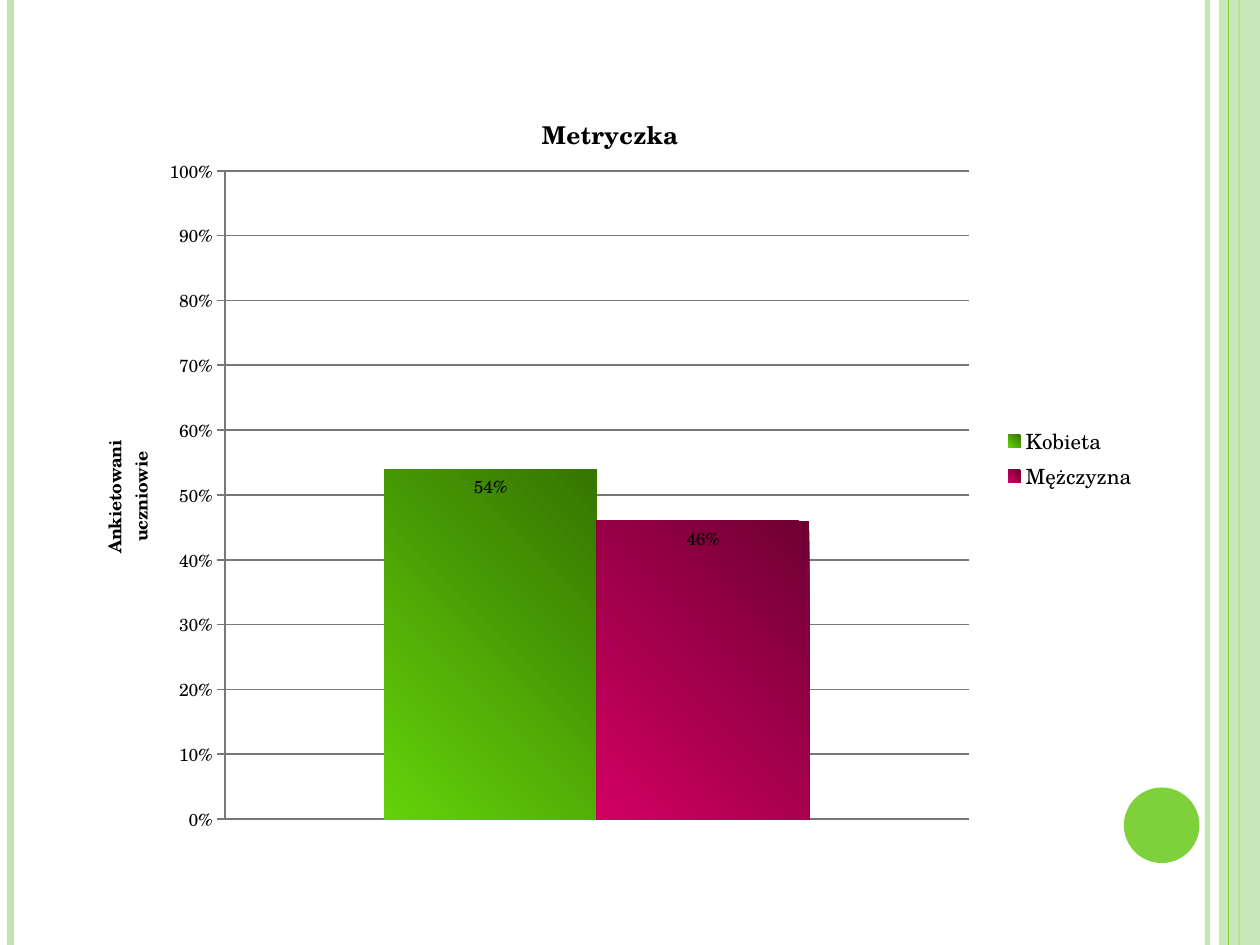
from lxml import etree
from pptx import Presentation
from pptx.chart import data
from pptx.dml.color import RGBColor
from pptx.enum import chart as ch, shapes
from pptx.oxml import parse_xml
from pptx.oxml.ns import nsdecls, qn
from pptx.util import Pt

PALE = RGBColor(0xC0, 0xE5, 0xAF)
GREEN = RGBColor(0x7F, 0xD1, 0x3B)
BLACK = RGBColor(0, 0, 0)
GREY = RGBColor(0x78, 0x78, 0x78)
# Bar gradients: glow in the lower left corner, then the outer colour
BAR_COLORS = [
    (RGBColor(0x64, 0xD2, 0x0A), RGBColor(0x35, 0x75, 0x00)),
    (RGBColor(0xD2, 0x00, 0x64), RGBColor(0x6E, 0x00, 0x32)),
]
FONT = "TeX Gyre Schola"


def set_alpha(parent, percent):
    color = next(parent.iter(qn("a:srgbClr")))
    etree.SubElement(color, qn("a:alpha")).set("val", str(percent * 1000))


def place(element, mode="", **fractions):
    """Give a chart part a manual layout, as fractions of the chart."""
    for old in element.findall(qn("c:layout")):
        element.remove(old)
    target = f'<c:layoutTarget val="{mode}"/>' if mode else ""
    modes = "".join(f'<c:{k}Mode val="edge"/>' for k in "xy")
    values = "".join(f'<c:{k} val="{v}"/>' for k, v in fractions.items())
    layout = parse_xml(
        f'<c:layout {nsdecls("c")}><c:manualLayout>{target}{modes}{values}'
        "</c:manualLayout></c:layout>")
    overlay = element.find(qn("c:overlay"))
    if overlay is None:
        element.insert(0, layout)
    else:
        overlay.addprevious(layout)


prs = Presentation()
prs.slide_width, prs.slide_height = Pt(720), Pt(540)
s = prs.slides.add_slide(prs.slide_layouts[6])

# Side stripes, band and dot, from back to front
BAND = (shapes.MSO_SHAPE.RECTANGLE, 696.5, 0, 23.5, 540, PALE, 87)
DOT = (shapes.MSO_SHAPE.OVAL, 642.25, 450, 43.2, 43.2, GREEN, 100)
STRIPES = [(690, PALE, 3, 93), (6, PALE, 4.5, 100), (708, GREEN, 1.5, 100),
           BAND, (702, GREEN, 0.75, 100), DOT]
for item in STRIPES:
    if len(item) == 4:
        x, color, width, alpha = item
        sp = s.shapes.add_connector(
            shapes.MSO_CONNECTOR.STRAIGHT, Pt(x), Pt(0), Pt(x), Pt(540))
        sp.line.color.rgb = color
        sp.line.width = Pt(width)
        etree.SubElement(sp._element.spPr, qn("a:effectLst"))
    else:
        kind, x, y, w, h, color, alpha = item
        sp = s.shapes.add_shape(kind, Pt(x), Pt(y), Pt(w), Pt(h))
        sp.shadow.inherit = False
        sp.fill.solid()
        sp.fill.fore_color.rgb = color
        sp.line.fill.background()
    if alpha < 100:
        set_alpha(sp._element.spPr, alpha)

# Chart
cd = data.CategoryChartData(number_format="0%")
cd.categories = ["1"]
cd.add_series("Kobieta", [0.54])
cd.add_series("Mężczyzna", [0.46])
chart = s.shapes.add_chart(
    ch.XL_CHART_TYPE.COLUMN_CLUSTERED,
    Pt(36), Pt(39.6), Pt(616.3), Pt(446.4), cd).chart
chart.font.name, chart.font.size = FONT, Pt(10)
chart.font.color.rgb = BLACK

chart.category_axis.visible = False
axis = chart.value_axis
axis.minimum_scale, axis.maximum_scale, axis.major_unit = 0, 1, 0.1
axis.major_tick_mark = ch.XL_TICK_MARK.OUTSIDE
axis.tick_labels.number_format = "0%"
axis.tick_labels.number_format_is_linked = False
axis.has_major_gridlines = True
for line in (axis.format.line, axis.major_gridlines.format.line):
    line.color.rgb = GREY
    line.width = Pt(1)

chart.has_title = axis.has_title = True
for title, wording, size in ((chart.chart_title, "Metryczka", 14),
                             (axis.axis_title, "Ankietowani\nuczniowie", 10)):
    tf = title.text_frame
    tf.text = wording
    for p in tf.paragraphs:
        p.font.name, p.font.size, p.font.bold = FONT, Pt(size), True
        p.font.color.rgb = BLACK
body = next(axis.axis_title._element.iter(qn("a:bodyPr")))
body.set("rot", "-5400000")
body.set("vert", "horz")

chart.has_legend = True
legend = chart.legend
legend.position = ch.XL_LEGEND_POSITION.RIGHT
legend.include_in_layout = False
legend.font.name, legend.font.size = FONT, Pt(12)
legend.font.color.rgb = BLACK

place(chart.chart_title._element, x=0.44, y=0.05)
place(axis.axis_title._element, x=0.03, y=0.47)
place(legend._element, x=0.87, y=0.45)
place(chart._chartSpace.chart.plotArea, "inner", x=0.15, y=0.13, w=0.69, h=0.83)

plot = chart.plots[0]
plot.gap_width, plot.overlap, plot.vary_by_categories = 150, 0, False
for series, (glow, outer) in zip(plot.series, BAR_COLORS):
    series.format.fill.solid()
    solid = series._element.spPr.find(qn("a:solidFill"))
    solid.getparent().replace(solid, parse_xml(
        f'<a:gradFill {nsdecls("a")} rotWithShape="1"><a:gsLst>'
        f'<a:gs pos="0"><a:srgbClr val="{glow}"/></a:gs>'
        f'<a:gs pos="100000"><a:srgbClr val="{outer}"/></a:gs></a:gsLst>'
        '<a:path path="circle"><a:fillToRect t="100000" r="100000"/></a:path>'
        "</a:gradFill>"))
    labels = series.data_labels
    labels.show_value = True
    labels.position = ch.XL_LABEL_POSITION.INSIDE_END
    labels.number_format, labels.number_format_is_linked = "0%", False

prs.save("out.pptx")
